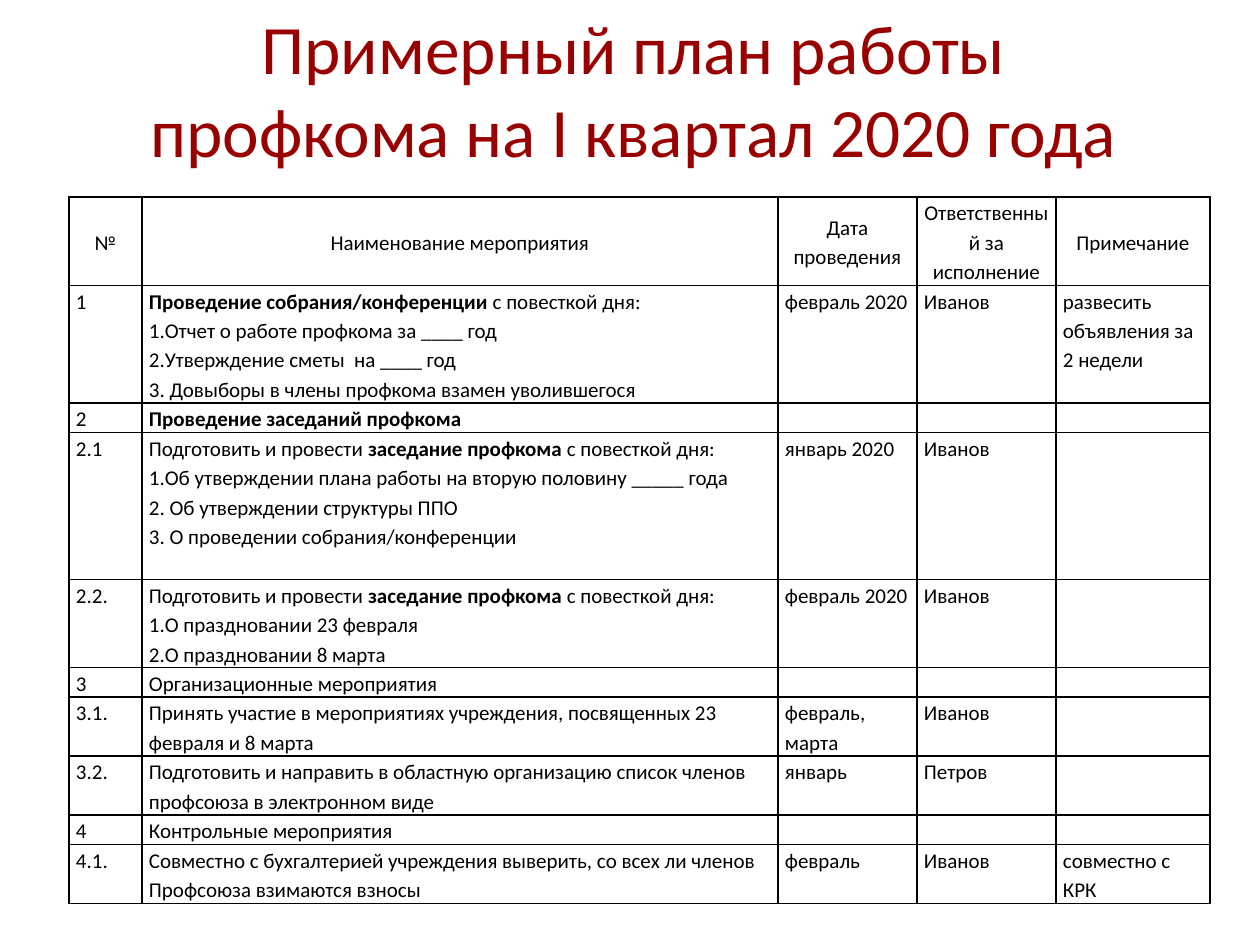
from lxml.etree import SubElement
from pptx import Presentation
from pptx.dml.color import RGBColor
from pptx.enum.text import MSO_ANCHOR, MSO_AUTO_SIZE, PP_ALIGN
from pptx.oxml.ns import qn
from pptx.util import Pt

COLORS = {"title": "990000", "text": "000000", "border": "000000"}
FONT = "Calibri"
LINE_HEIGHT = 29.4


def px(value):
    return round(value * 914400 / 126)


def add_run(paragraph, text, size, color, bold=False):
    run = paragraph.add_run()
    run.text = text
    run.font.name = FONT
    run.font.size = Pt(size)
    run.font.bold = bold
    run.font.color.rgb = RGBColor.from_string(color)


presentation = Presentation()
presentation.slide_width = px(1260)
presentation.slide_height = px(945)
slide = presentation.slides.add_slide(presentation.slide_layouts[5])

title = slide.shapes.title
title.left, title.top, title.width, title.height = px(98), px(20), px(1071), px(137)
title.text_frame.word_wrap = True
title.text_frame.auto_size = MSO_AUTO_SIZE.NONE
title.text_frame.vertical_anchor = MSO_ANCHOR.MIDDLE
title_paragraph = title.text_frame.paragraphs[0]
title_paragraph.alignment = PP_ALIGN.CENTER
add_run(title_paragraph, "Примерный план работы профкома на I квартал 2020 года",
        39.6, COLORS["title"])

# Height in text lines, then the five cells; asterisks enclose bold text.
plan_rows = [
    (3, "№", "Наименование мероприятия", "Дата проведения",
     "Ответственный за исполнение", "Примечание"),
    (4, "1", "*Проведение собрания/конференции* с повесткой дня:\n"
     "1.Отчет о работе профкома за ____ год\n"
     "2.Утверждение сметы  на ____ год\n"
     "3. Довыборы в члены профкома взамен уволившегося",
     "февраль 2020", "Иванов", "развесить объявления за 2 недели"),
    (1, "2", "*Проведение заседаний профкома*", "", "", ""),
    (5, "2.1", "Подготовить и провести *заседание профкома* с повесткой дня:\n"
     "1.Об утверждении плана работы на вторую половину _____ года\n"
     "2. Об утверждении структуры ППО\n"
     "3. О проведении собрания/конференции",
     "январь 2020", "Иванов", ""),
    (3, "2.2.", "Подготовить и провести *заседание профкома* с повесткой дня:\n"
     "1.О праздновании 23 февраля\n"
     "2.О праздновании 8 марта",
     "февраль 2020", "Иванов", ""),
    (1, "3", "Организационные мероприятия", "", "", ""),
    (2, "3.1.", "Принять участие в мероприятиях учреждения, "
     "посвященных 23 февраля и 8 марта", "февраль, марта", "Иванов", ""),
    (2, "3.2.", "Подготовить и направить в областную организацию список "
     "членов профсоюза в электронном виде", "январь", "Петров", ""),
    (1, "4", "Контрольные мероприятия", "", "", ""),
    (2, "4.1.", "Совместно с бухгалтерией учреждения выверить, со всех ли "
     "членов Профсоюза взимаются взносы", "февраль", "Иванов", "совместно с КРК"),
]
column_widths = [73, 636, 139, 139, 154]
table_height = LINE_HEIGHT * sum(row[0] for row in plan_rows)

table = slide.shapes.add_table(
    len(plan_rows), len(column_widths), px(69), px(197),
    px(sum(column_widths)), px(table_height)).table
table.first_row = False
table.horz_banding = False
for column, width in zip(table.columns, column_widths):
    column.width = px(width)

for row_index, (line_count, *texts) in enumerate(plan_rows):
    table.rows[row_index].height = px(LINE_HEIGHT * line_count)
    is_header = row_index == 0
    for column_index, text in enumerate(texts):
        cell = table.cell(row_index, column_index)
        cell.margin_left = cell.margin_right = px(7)
        cell.margin_top = cell.margin_bottom = 0
        cell.vertical_anchor = MSO_ANCHOR.MIDDLE if is_header else MSO_ANCHOR.TOP

        cell_properties = cell._tc.get_or_add_tcPr()
        for side in ("lnL", "lnR", "lnT", "lnB"):
            border = SubElement(cell_properties, qn(f"a:{side}"), w=str(Pt(1)))
            border_fill = SubElement(border, qn("a:solidFill"))
            SubElement(border_fill, qn("a:srgbClr"), val=COLORS["border"])
        cell.fill.background()

        for line_index, line in enumerate(text.split("\n")):
            frame = cell.text_frame
            paragraph = frame.add_paragraph() if line_index else frame.paragraphs[0]
            paragraph.alignment = PP_ALIGN.CENTER if is_header else PP_ALIGN.LEFT
            paragraph.line_spacing = 1.15
            for part_index, part in enumerate(line.split("*")):
                if part:
                    add_run(paragraph, part, 12, COLORS["text"], part_index % 2 == 1)
            if not line:
                # An empty cell takes its line height from the end mark.
                SubElement(paragraph._p, qn("a:endParaRPr"), sz="1200")

presentation.save("out.pptx")
